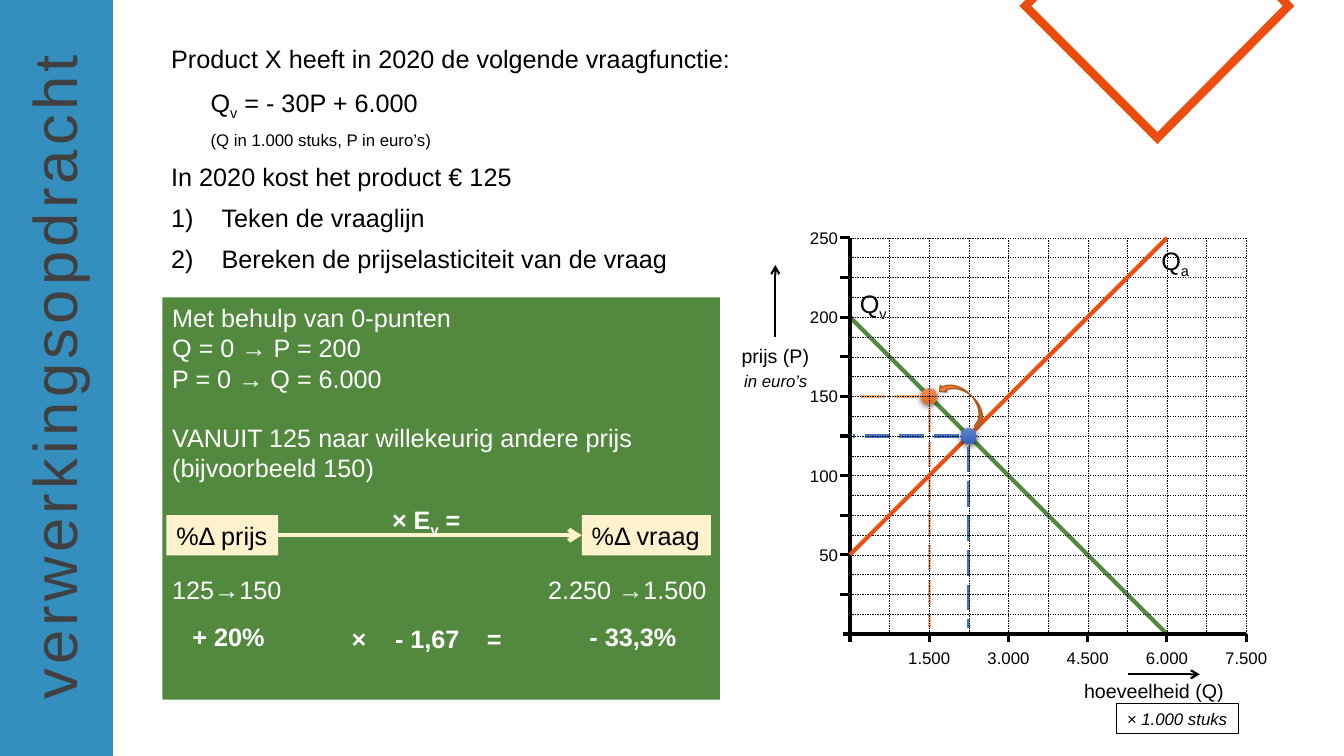
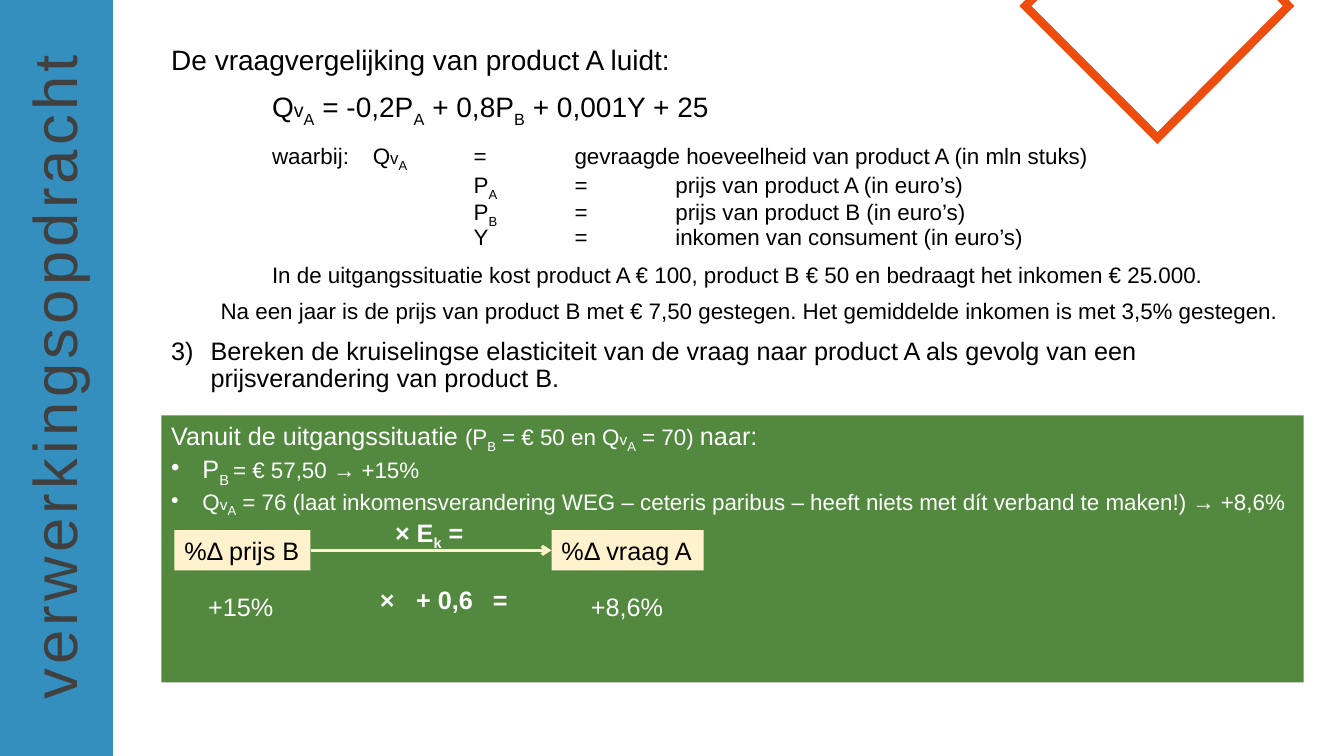
"""Builds two slides of an economics exercise on demand and elasticity."""
from lxml.etree import SubElement
from pptx import Presentation
from pptx.dml.color import RGBColor
from pptx.enum.dml import MSO_LINE
from pptx.enum.shapes import MSO_CONNECTOR, MSO_SHAPE
from pptx.enum.text import MSO_ANCHOR, MSO_AUTO_SIZE, PP_ALIGN
from pptx.oxml.ns import qn
from pptx.util import Inches, Pt

WIDTH, HEIGHT = 13.33, 7.5
FONT, BLACK, WHITE = "Arial", "000000", "FFFFFF"
GREEN, ORANGE, CREAM, BLUE, PEACH = "52893F", "ED4D0F", "FFF2CC", "4472C4", "F4B183"
BAND, TITLE_GREY = "1A80B6", "404040"
TITLE = "verwerkingsopdracht"
DIAMOND = [(10.3, -0.07), (12.66, -0.07), (12.78, 0.06), (11.48, 1.37), (10.17, 0.06)]
INCH_TABS = [(inch, "l") for inch in range(1, 6)]


def sub(text, size=None):
    """Return a subscript piece of text."""
    return text, size, True


DEMAND_TASK = [
    dict(runs=["Product X heeft in 2020 de volgende vraagfunctie:"]),
    dict(runs=["Q", sub("v"), " = - 30P + 6.000"], before=10, indent=(0.39, 0)),
    dict(runs=["(Q in 1.000 stuks, P in euro’s)"], size=12, before=10, indent=(0.39, 0)),
    dict(runs=["In 2020 kost het product € 125"], before=10),
    dict(runs=["Teken de vraaglijn"], before=10, indent=(0.5, -0.5), number=1),
    dict(runs=["Bereken de prijselasticiteit van de vraag"], before=10,
         indent=(0.5, -0.5), number=1),
]
DEMAND_ANSWER = [
    dict(runs=["Met behulp van 0-punten"]),
    dict(runs=["Q = 0 → P = 200\nP = 0 → Q = 6.000"]),
    dict(runs=["VANUIT 125 naar willekeurig andere prijs"], before=21),
    dict(runs=["(bijvoorbeeld 150)"]),
    dict(runs=["125→150\t2.250 →1.500"], before=65, tabs=[(5.3, "r")]),
    dict(runs=["\t+ 20%\t- 33,3%"], before=12.5, bold=True, tabs=[(0.2, "l"), (5, "r")]),
]
CROSS_TASK = [
    dict(runs=["De vraagvergelijking van product A luidt:"], size=20),
    dict(runs=["\tQ", ("v", 14), sub("A"), " = -0,2P", sub("A"), " + 0,8P", sub("B"),
               " + 0,001Y + 25"], size=20, before=10, tabs=INCH_TABS),
    dict(runs=[("\t", 20), "waarbij:\tQ", ("v", 12), sub("A"),
               "\t=\tgevraagde hoeveelheid van product A (in mln stuks)\n\t\t\tP", sub("A"),
               "\t=\tprijs van product A (in euro’s)\n\t\t\tP", sub("B"),
               "\t=\tprijs van product B (in euro’s)\n\t\t\tY"
               "\t=\tinkomen van consument (in euro’s)"], size=16, before=10, tabs=INCH_TABS),
    dict(runs=["\tIn de uitgangssituatie kost product A € 100, product B € 50 "
               "en bedraagt het inkomen € 25.000."], size=16, before=10, tabs=INCH_TABS),
    dict(runs=[("\t", 18), "Na een jaar is de prijs van product B met € 7,50 gestegen. "
               "Het gemiddelde inkomen is met 3,5% gestegen."],
         size=16, before=6, indent=(0.49, -0.49)),
    dict(runs=["Bereken de kruiselingse elasticiteit van de vraag naar product A "
               "als gevolg van een prijsverandering van product B."],
         before=10, indent=(0.39, -0.39), number=3),
]
CROSS_ANSWER = [
    dict(runs=["Vanuit de uitgangssituatie ", ("(P", 16), sub("B", 16), (" = € 50 en Q", 16),
               ("v", 11), sub("A", 16), (" = 70) ", 16), "naar:"]),
    dict(runs=["P", sub("B "), ("= € 57,50 → +15%", 16)], indent=(0.31, -0.31), bullet="•"),
    dict(runs=["Q", ("v", 11), sub("A"), " = 76 (laat inkomensverandering WEG – ceteris paribus"
               " – heeft niets met dít verband te maken!) → +8,6%"],
         size=16, indent=(0.31, -0.31), bullet="•"),
    dict(runs=["\t+15%\t+8,6%"], before=52, tabs=[(0.69, "ctr"), (4.52, "ctr")]),
]

ORIGIN_X, ORIGIN_Y, CELL = 8.43, 6.29, 0.786
Q_STEP, P_STEP, STEPS = 1500, 50, 5
Q_MAX, P_MAX = Q_STEP * STEPS, P_STEP * STEPS
OLD_POINT, NEW_POINT = (2250, 125), (1500, 150)


def rgb(code):
    """Turn a hex string into a colour."""
    return RGBColor.from_string(code)


def write(frame, paragraphs, color=BLACK, spacing=None, align=PP_ALIGN.LEFT):
    """Fill a text frame from paragraph dicts."""
    for i, item in enumerate(paragraphs):
        paragraph = frame.paragraphs[0] if i == 0 else frame.add_paragraph()
        props = paragraph._p.get_or_add_pPr()
        if "indent" in item:
            for name, length in zip(("marL", "indent"), item["indent"]):
                props.set(name, str(Inches(length)))
        if "bullet" in item:
            SubElement(props, qn("a:buChar"), char=item["bullet"])
        if "number" in item:
            SubElement(props, qn("a:buAutoNum"), type="arabicParenR",
                       startAt=str(item["number"]))
        if "tabs" in item:
            stops = SubElement(props, qn("a:tabLst"))
            for place, kind in item["tabs"]:
                SubElement(stops, qn("a:tab"), pos=str(Inches(place)), algn=kind)
        font = paragraph.font
        font.name, font.size = FONT, Pt(item.get("size", 18))
        font.bold, font.italic = item.get("bold", False), item.get("italic", False)
        font.color.rgb = rgb(color)
        paragraph.alignment = align
        paragraph.space_before = Pt(item.get("before", 0))
        if spacing:
            paragraph.line_spacing = spacing
        for piece in item["runs"]:
            text, size, low = (((piece,) if isinstance(piece, str) else piece)
                               + (None, None))[:3]
            for n, line in enumerate(text.split("\n")):
                if n:
                    paragraph.add_line_break()
                run = paragraph.add_run()
                run.text = line
                if size:
                    run.font.size = Pt(size)
                if low:
                    run.font._rPr.set("baseline", "-25000")


def label(slide, box, runs, color=BLACK, fill=None, outline=None, align=PP_ALIGN.LEFT, **style):
    """Add a short text that keeps to one line."""
    area = slide.shapes.add_textbox(*map(Inches, box))
    area.text_frame.word_wrap = "tabs" in style
    if fill:
        area.fill.solid()
        area.fill.fore_color.rgb = rgb(fill)
    if outline:
        area.line.color.rgb = rgb(outline)
        area.line.width = Pt(0.75)
    write(area.text_frame, [dict(runs=runs, **style)], color, align=align)


def rule(slide, start, end, color=BLACK, width=2.25, dash=None, arrow=False):
    """Draw a straight line between two places in inches."""
    line = slide.shapes.add_connector(MSO_CONNECTOR.STRAIGHT, *map(Inches, start + end))
    line.line.color.rgb = rgb(color)
    line.line.width = Pt(width)
    if dash:
        line.line.dash_style = dash
    if arrow:
        SubElement(line.line._get_or_add_ln(), qn("a:tailEnd"), type="arrow")
    SubElement(line._element.spPr, qn("a:effectLst"))


def block(slide, kind, box, fill):
    """Add a preset shape with a plain fill and no line."""
    shape = slide.shapes.add_shape(kind, *map(Inches, box))
    shape.shadow.inherit = False
    shape.fill.solid()
    shape.fill.fore_color.rgb = rgb(fill)
    shape.line.fill.background()
    return shape


def start_slide(deck, task):
    """Add a slide with the diamond, the side band, its title and the task."""
    slide = deck.slides.add_slide(deck.slide_layouts[5])
    points = [tuple(map(Inches, point)) for point in DIAMOND]
    builder = slide.shapes.build_freeform(*points[0], scale=1.0)
    builder.add_line_segments(points[1:], close=True)
    diamond = builder.convert_to_shape()
    diamond.shadow.inherit = False
    diamond.fill.background()
    diamond.line.color.rgb = rgb(ORANGE)
    diamond.line.width = Pt(6)
    SubElement(diamond.line._get_or_add_ln(), qn("a:miter"), lim="800000")

    band = block(slide, MSO_SHAPE.RECTANGLE, (0, 0, 1.12, HEIGHT), BAND)
    tint = band._element.spPr.find(qn("a:solidFill"))[0]
    SubElement(tint, qn("a:alpha"), val="88000")

    title = slide.shapes.title
    title.left, title.top, title.width, title.height = map(Inches, (-2.83, 3.27, 6.7, 0.84))
    title.rotation = 270
    title.text_frame.word_wrap = False
    title.text_frame.auto_size = MSO_AUTO_SIZE.NONE
    write(title.text_frame, [dict(runs=[TITLE], size=44)], TITLE_GREY)
    title.text_frame.paragraphs[0].runs[0].font._rPr.set("spc", "300")
    slide.shapes._spTree.append(title._element)

    body = slide.shapes.add_textbox(*map(Inches, (1.6, 0.41, 11.4, 6.8)))
    body.text_frame.word_wrap = True
    write(body.text_frame, task, spacing=0.9)
    return slide


def answer(slide, box, paragraphs):
    """Add the green answer panel."""
    panel = block(slide, MSO_SHAPE.RECTANGLE, box, GREEN)
    panel.text_frame.vertical_anchor = MSO_ANCHOR.TOP
    panel.text_frame.word_wrap = True
    write(panel.text_frame, paragraphs, WHITE)


def elasticity(slide, top, cause, effect, width, factor, result):
    """Link the cause to the effect, with the elasticity above and its value below."""
    for text, left, wide in (cause, effect):
        label(slide, (left, top, wide, 0.4), [text], fill=CREAM)
    rule(slide, (cause[1] + cause[2], top + 0.2), (effect[1], top + 0.2),
         CREAM, width, arrow=True)
    letter, left, rise = factor
    label(slide, (left, top - rise, 0.9, 0.4), ["× E", sub(letter), " ="], WHITE, bold=True)
    text, left, low, stops = result
    label(slide, (left, low, 1.8, 0.4), [text], WHITE, bold=True,
          tabs=[(stop, "l") for stop in stops])


def at(quantity, price):
    """Place a quantity and a price on the graph."""
    return ORIGIN_X + quantity / Q_STEP * CELL, ORIGIN_Y - price / P_STEP * CELL


def guides(slide, point, color):
    """Draw dashed lines from a point to both axes."""
    x, y = at(*point)
    rule(slide, (x - 0.1, y), (ORIGIN_X + 0.03, y), color, dash=MSO_LINE.LONG_DASH)
    rule(slide, (x, y + 0.11), (x, ORIGIN_Y - 0.06), color, dash=MSO_LINE.LONG_DASH)


def marker(slide, point, light, dark):
    """Draw a shaded dot with a soft shadow."""
    x, y = at(*point)
    dot = block(slide, MSO_SHAPE.OVAL, (x - 0.08, y - 0.08, 0.16, 0.16), light)
    dot.fill.gradient()
    dot.fill.gradient_angle = 270
    for stop, color in zip(dot.fill.gradient_stops, (light, dark)):
        stop.color.rgb = rgb(color)
    effects = dot._element.spPr.find(qn("a:effectLst"))
    shadow = SubElement(effects, qn("a:outerShdw"), blurRad="57150", dist="19050",
                        dir="5400000", algn="ctr", rotWithShape="0")
    SubElement(SubElement(shadow, qn("a:srgbClr"), val=BLACK), qn("a:alpha"), val="63000")


def graph(slide):
    """Draw the supply and demand graph."""
    label(slide, (8.43, 2.81, 0.48, 0.4), ["Q", sub("v")])
    rule(slide, at(0, 200), at(6000, 0), GREEN, 3)
    guides(slide, OLD_POINT, BLUE)
    marker(slide, NEW_POINT, "F18C57", "E56C19")
    guides(slide, NEW_POINT, PEACH)

    columns, rows = STEPS * 2, STEPS * 4
    grid = [(at(Q_MAX * i / columns, P_MAX), at(Q_MAX * i / columns, 0))
            for i in range(1, columns + 1)]
    grid += [(at(0, P_MAX * i / rows), at(Q_MAX, P_MAX * i / rows)) for i in range(1, rows + 1)]
    for start, end in grid:
        rule(slide, start, end, width=0.25, dash=MSO_LINE.DASH)

    rule(slide, at(0, P_MAX), (ORIGIN_X, ORIGIN_Y + 0.08))
    rule(slide, (ORIGIN_X - 0.07, ORIGIN_Y), at(Q_MAX, 0))
    for i in range(1, STEPS * 2 + 1):
        x, y = at(0, P_STEP * i / 2)
        rule(slide, (x, y), (x - 0.1, y))
    for i in range(1, STEPS + 1):
        x, y = at(Q_STEP * i, 0)
        rule(slide, (x, y), (x, y + 0.08))
        label(slide, (x - 0.31, y + 0.09, 0.62, 0.3), [f"{Q_STEP * i:,}".replace(",", ".")],
              size=12, align=PP_ALIGN.CENTER)
        x, y = at(0, P_STEP * i)
        label(slide, (x - 0.5, y - 0.15, 0.48, 0.3), [str(P_STEP * i)],
              size=12, align=PP_ALIGN.RIGHT)

    rule(slide, (7.69, 3.34), (7.69, 2.63), width=1.5, arrow=True)
    rule(slide, (11.19, 6.69), (11.9, 6.69), width=1.5, arrow=True)
    for text, box, size, outline in (
            ("prijs (P)", (7.25, 3.36, 0.88, 0.34), 14, None),
            ("hoeveelheid (Q)", (10.65, 6.69, 1.59, 0.34), 14, None),
            ("in euro’s", (7.28, 3.63, 0.83, 0.3), 12, None),
            ("× 1.000 stuks", (11.07, 6.98, 1.21, 0.3), 12, BLACK)):
        label(slide, box, [text], outline=outline, align=PP_ALIGN.CENTER,
              size=size, italic=size == 12)

    rule(slide, at(0, 50), at(6000, 250), ORANGE, 3)
    label(slide, (11.42, 2.38, 0.49, 0.4), ["Q", sub("a")])
    marker(slide, OLD_POINT, "6183CB", "3062BB")
    shift = block(slide, MSO_SHAPE.CURVED_DOWN_ARROW, (9.27, 3.89, 0.58, 0.19), "ED7D31")
    shift.line.color.rgb = rgb("AF5C24")
    shift.line.width = Pt(1)
    shift.rotation = 44.1
    shift._element.spPr.xfrm.set("flipH", "1")


def main():
    """Build and save both slides."""
    deck = Presentation()
    deck.slide_width, deck.slide_height = Inches(WIDTH), Inches(HEIGHT)

    demand = start_slide(deck, DEMAND_TASK)
    answer(demand, (1.61, 2.95, 5.53, 3.99), DEMAND_ANSWER)
    elasticity(demand, 5.11, ("%Δ prijs", 1.65, 1.11), ("%Δ vraag", 5.77, 1.28), 3,
               ("v", 3.79, 0.16), ("×\t- 1,67\t=", 3.39, 6.13, (0.43, 1.34)))
    graph(demand)

    cross = start_slide(deck, CROSS_TASK)
    answer(cross, (1.6, 4.12, 11.33, 2.65), CROSS_ANSWER)
    elasticity(cross, 5.26, ("%Δ prijs B", 1.73, 1.35), ("%Δ vraag A", 5.47, 1.51), 2.25,
               ("k", 3.82, 0.18), ("×\t+ 0,6\t=", 3.67, 5.75, (0.36, 1.12)))
    deck.save("out.pptx")


if __name__ == "__main__":
    main()
